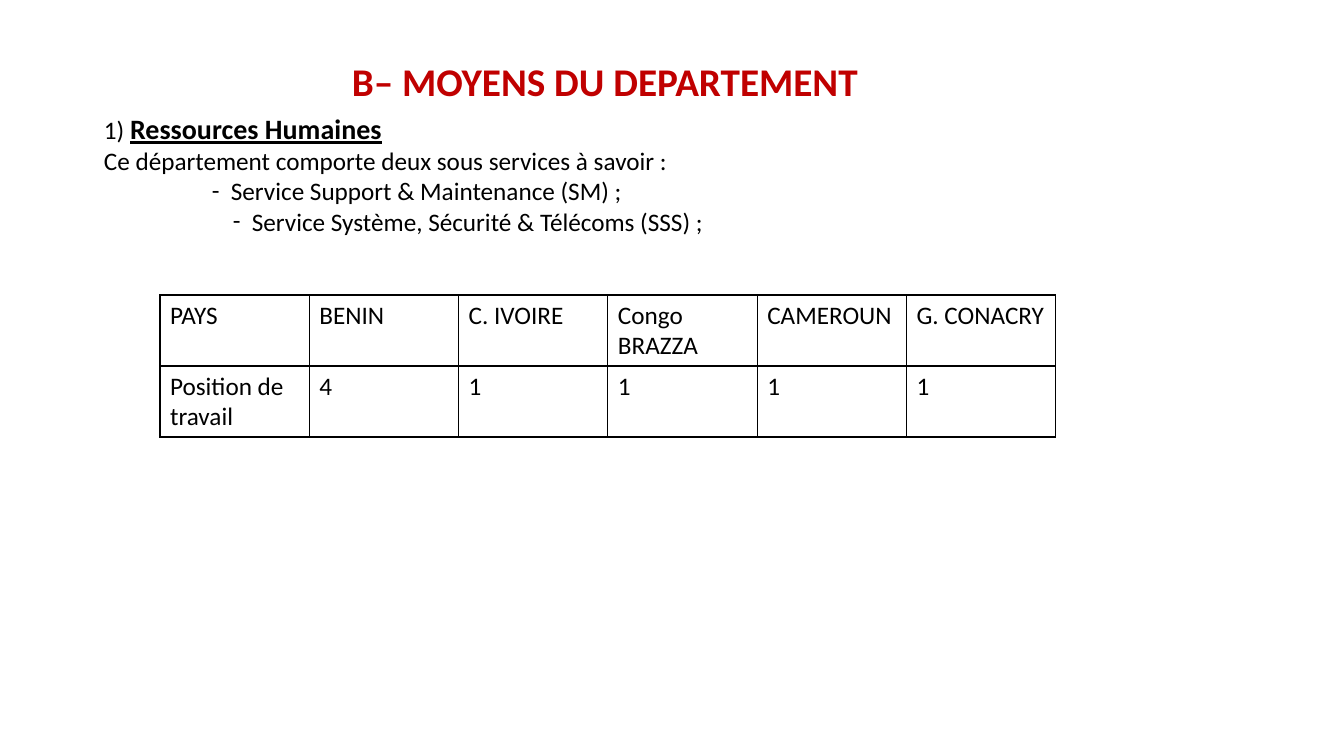
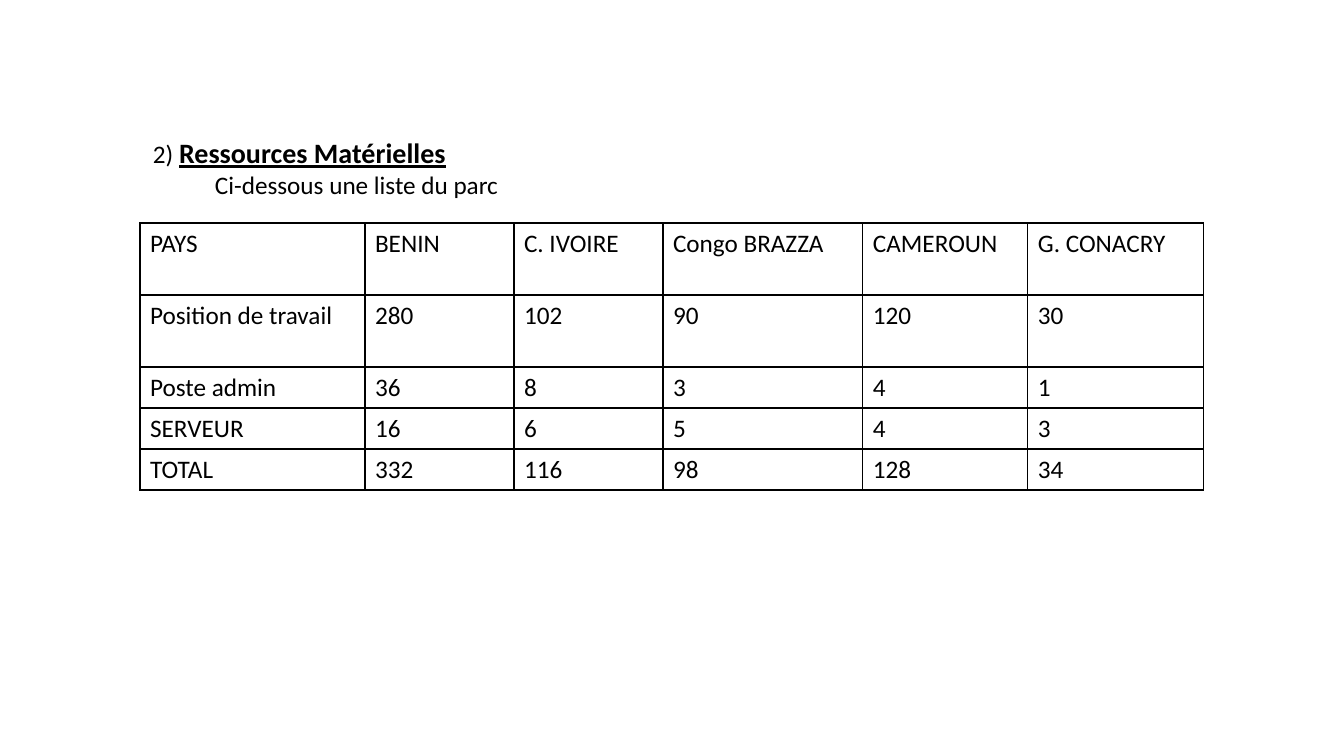
from lxml.etree import SubElement
from pptx import Presentation
from pptx.dml.color import RGBColor
from pptx.enum.text import MSO_ANCHOR, PP_ALIGN
from pptx.oxml.ns import qn
from pptx.util import Pt

PX = 914400 / 100.8
FONT = "Calibri"
COLORS = {"text": "000000", "title": "C00000", "border": "000000"}
STYLES = {
    "title": dict(size=28, color="title", bold=True),
    "heading": dict(size=20, color="text", bold=True, underline=True),
    "body": dict(size=18, color="text"),
}
COUNTRIES = ["PAYS", "BENIN", "C. IVOIRE", "Congo BRAZZA", "CAMEROUN", "G. CONACRY"]

# A paragraph is (runs, left indent, dash gap); a run is (text, style).
SLIDES = [
    {
        "title": "B– MOYENS DU DEPARTEMENT",
        "title_box": (342, 44, 641, 80),
        "text_box": (94, 107, 1186, 377),
        "paragraphs": [
            ([("1) ", "body"), ("Ressources Humaines", "heading")], 0, 0),
            ([("Ce département comporte deux sous services à savoir :", "body")], 0, 0),
            ([("Service Support & Maintenance (SM) ;", "body")], 127, 19),
            ([("Service Système, Sécurité & Télécoms (SSS) ;", "body")], 148, 19),
        ],
        "table_at": (160, 295),
        "columns": [896 / 6] * 6,
        "rows": [71, 71],
        "cells": [
            COUNTRIES,
            ["Position de travail", "4", "1", "1", "1", "1"],
        ],
    },
    {
        "text_box": (143, 131, 672, 75),
        "paragraphs": [
            ([("2) ", "body"), ("Ressources Matérielles", "heading")], 0, 0),
            ([("Ci-dessous une liste du parc", "body")], 62, 0),
        ],
        "table_at": (140, 223),
        "columns": [225, 149, 149, 200, 165, 176],
        "rows": [72, 72, 41, 41, 41],
        "cells": [
            COUNTRIES,
            ["Position de travail", "280", "102", "90", "120", "30"],
            ["Poste admin", "36", "8", "3", "4", "1"],
            ["SERVEUR", "16", "6", "5", "4", "3"],
            ["TOTAL", "332", "116", "98", "128", "34"],
        ],
    },
]


def px(n):
    return round(n * PX)


def add_run(p, text, style):
    look = STYLES[style]
    r = p.add_run()
    r.text = text
    r.font.name = FONT
    r.font.size = Pt(look["size"])
    r.font.bold = look.get("bold", False)
    r.font.underline = look.get("underline", False)
    r.font.color.rgb = RGBColor.from_string(COLORS[look["color"]])


def add_text_frame(slide, box):
    tf = slide.shapes.add_textbox(*map(px, box)).text_frame
    tf.word_wrap = True
    return tf


def add_title(slide, text, box):
    tf = add_text_frame(slide, box)
    tf.vertical_anchor = MSO_ANCHOR.MIDDLE
    p = tf.paragraphs[0]
    p.line_spacing = 0.9
    add_run(p, text, "title")


def add_paragraphs(slide, paragraphs, box):
    tf = add_text_frame(slide, box)
    for i, (runs, indent, dash_gap) in enumerate(paragraphs):
        p = tf.add_paragraph() if i else tf.paragraphs[0]
        p.alignment = PP_ALIGN.JUSTIFY
        pPr = p._p.get_or_add_pPr()
        pPr.set("marL", str(px(indent)))
        pPr.set("indent", str(-px(dash_gap)))
        if dash_gap:
            SubElement(pPr, qn("a:buFont"), typeface=FONT)
            SubElement(pPr, qn("a:buChar"), char="-")
        for text, style in runs:
            add_run(p, text, style)


def add_borders(cell):
    tcPr = cell._tc.get_or_add_tcPr()
    for side in ("lnL", "lnR", "lnT", "lnB"):
        ln = SubElement(tcPr, qn(f"a:{side}"), w=str(Pt(1)))
        fill = SubElement(ln, qn("a:solidFill"))
        SubElement(fill, qn("a:srgbClr"), val=COLORS["border"])


def add_grid(slide, at, columns, rows, cells):
    box = (*at, sum(columns), sum(rows))
    table = slide.shapes.add_table(len(rows), len(columns), *map(px, box)).table
    table.first_row = table.horz_banding = False
    for column, width in zip(table.columns, columns):
        column.width = px(width)
    for row, height, texts in zip(table.rows, rows, cells):
        row.height = px(height)
        for cell, text in zip(row.cells, texts):
            add_borders(cell)
            cell.fill.background()
            add_run(cell.text_frame.paragraphs[0], text, "body")


def main():
    prs = Presentation()
    prs.slide_width, prs.slide_height = px(1344), px(756)
    for content in SLIDES:
        slide = prs.slides.add_slide(prs.slide_layouts[6])
        if "title" in content:
            add_title(slide, content["title"], content["title_box"])
        add_paragraphs(slide, content["paragraphs"], content["text_box"])
        add_grid(slide, content["table_at"], content["columns"],
                 content["rows"], content["cells"])
    prs.save("out.pptx")


if __name__ == "__main__":
    main()
